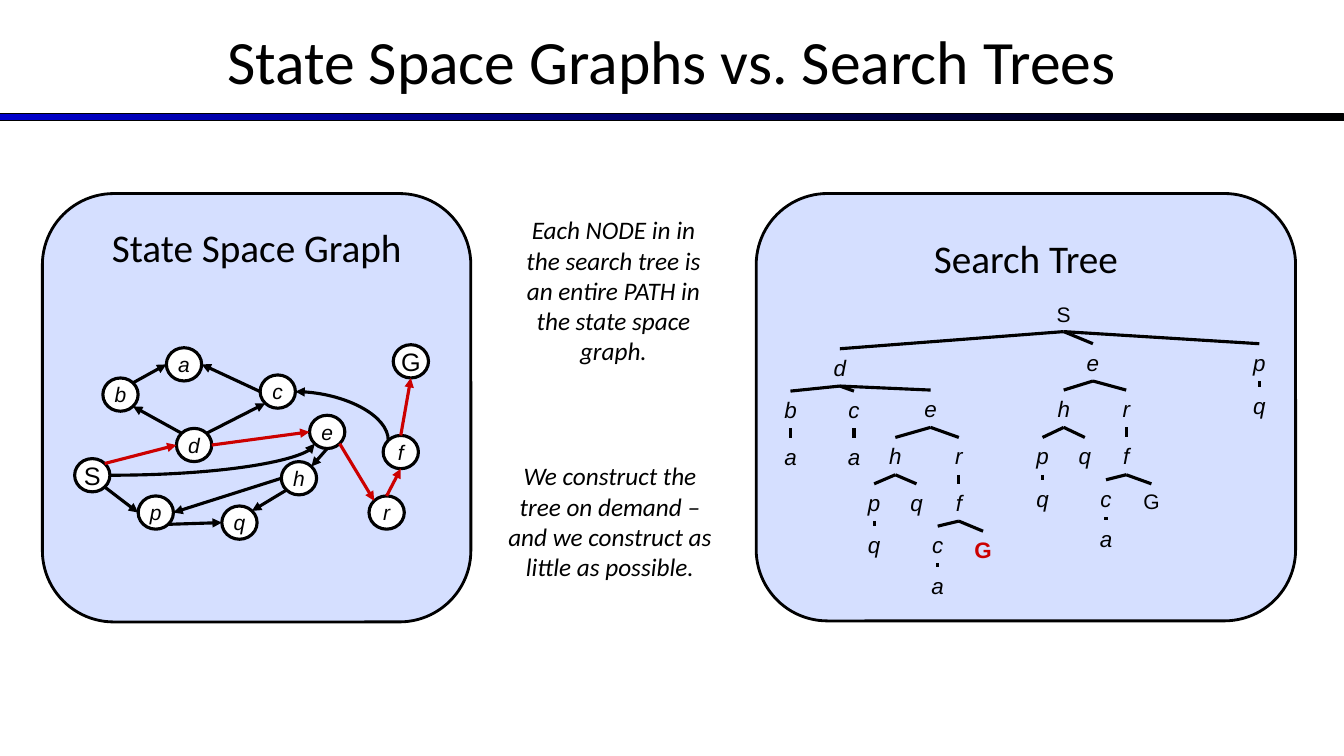
from lxml import etree
from pptx import Presentation
from pptx.dml.color import RGBColor
from pptx.enum.shapes import MSO_CONNECTOR, MSO_SHAPE
from pptx.enum.text import MSO_ANCHOR, MSO_AUTO_SIZE, PP_ALIGN
from pptx.oxml.ns import qn
from pptx.util import Inches, Pt

BLACK = RGBColor(0x00, 0x00, 0x00)
WHITE = RGBColor(0xFF, 0xFF, 0xFF)
RED = RGBColor(0xCC, 0x00, 0x00)
BLUE = RGBColor(0x00, 0x00, 0xCC)
PALE_BLUE = RGBColor(0xD5, 0xDF, 0xFF)

STRAIGHT, CURVE = MSO_CONNECTOR.STRAIGHT, MSO_CONNECTOR.CURVE
RECT, ROUNDED = MSO_SHAPE.RECTANGLE, MSO_SHAPE.ROUNDED_RECTANGLE
CIRCLE = MSO_SHAPE.FLOWCHART_CONNECTOR
CENTER, MIDDLE = PP_ALIGN.CENTER, MSO_ANCHOR.MIDDLE
NO_AUTOFIT = MSO_AUTO_SIZE.NONE
TOP, BOTTOM = 0, 2  # connection sites of a text box

SLIDE_W, SLIDE_H = 13.33, 7.5
NODE_W, NODE_H = 0.35, 0.33
DIAGONAL = 0.354  # offset of a circle's diagonal site, as a share of its size

# Circle sites: horizontal and vertical offset from the centre
SITES = {
    "T": (0, -0.5), "B": (0, 0.5), "L": (-0.5, 0), "R": (0.5, 0),
    "TL": (-DIAGONAL, -DIAGONAL), "TR": (DIAGONAL, -DIAGONAL),
    "BL": (-DIAGONAL, DIAGONAL), "BR": (DIAGONAL, DIAGONAL),
}

# State space graph: left and top of each node
GRAPH_NODES = {
    "S": (0.74, 4.55), "G": (3.9, 3.42), "d": (1.75, 4.25), "b": (1.02, 3.75),
    "p": (1.37, 4.92), "q": (2.2, 5.02), "c": (2.58, 3.72), "e": (3.07, 4.12),
    "h": (2.79, 4.58), "a": (1.65, 3.45), "f": (3.8, 4.32), "r": (3.66, 4.92),
}
# From node and site, to node and site, colour
GRAPH_EDGES = [
    ("S", "BR", "p", "L", BLACK), ("p", "BR", "q", "L", BLACK),
    ("h", "BL", "q", "TR", BLACK), ("h", "L", "p", "R", BLACK),
    ("e", "B", "h", "TR", BLACK), ("e", "BR", "r", "TL", RED),
    ("r", "T", "f", "B", RED), ("f", "T", "G", "B", RED),
    ("S", "TR", "d", "L", RED), ("d", "TL", "b", "BR", BLACK),
    ("b", "TR", "a", "L", BLACK), ("c", "L", "a", "R", BLACK),
    ("d", "TR", "c", "BL", BLACK), ("d", "R", "e", "L", RED),
]

# Search tree: label, centre x, top, children
SEARCH_TREE = ("S", 10.55, 2.94, [
    ("d", 8.33, 3.46, [
        ("b", 7.84, 3.88, [("a", 7.84, 4.35, [])]),
        ("c", 8.47, 3.88, [("a", 8.47, 4.35, [])]),
        ("e", 9.23, 3.87, [
            ("h", 8.88, 4.34, [
                ("p", 8.67, 4.8, [("q", 8.67, 5.22, [])]),
                ("q", 9.09, 4.8, []),
            ]),
            ("r", 9.51, 4.34, [
                ("f", 9.51, 4.8, [
                    ("c", 9.3, 5.22, [("a", 9.3, 5.63, [])]),
                    ("G", 9.75, 5.27, []),
                ]),
            ]),
        ]),
    ]),
    ("e", 10.84, 3.41, [
        ("h", 10.55, 3.87, [
            ("p", 10.34, 4.34, [("q", 10.34, 4.76, [])]),
            ("q", 10.76, 4.34, []),
        ]),
        ("r", 11.17, 3.87, [
            ("f", 11.17, 4.34, [
                ("c", 10.97, 4.76, [("a", 10.97, 5.16, [])]),
                ("G", 11.42, 4.8, []),
            ]),
        ]),
    ]),
    ("p", 12.49, 3.41, [("q", 12.49, 3.84, [])]),
])
GOAL_FOUND = ("G", 9.75)


def write(tf, text, size, font, color=BLACK, italic=False, bold=False):
    p = tf.paragraphs[0]
    p.text = text
    p.alignment = CENTER
    p.font.size, p.font.name = Pt(size), font
    p.font.italic, p.font.bold = italic, bold
    p.font.color.rgb = color


def add_text(shapes, box, text, size, font, **style):
    tb = shapes.add_textbox(*map(Inches, box))
    tb.text_frame.word_wrap = True
    write(tb.text_frame, text, size, font, **style)
    return tb


def add_box(shapes, kind, box, fill, line_width):
    sp = shapes.add_shape(kind, *map(Inches, box))
    sp.shadow.inherit = False
    sp.fill.solid()
    sp.fill.fore_color.rgb = fill
    sp.line.color.rgb = BLACK
    sp.line.width = Pt(line_width)
    return sp


def add_line(shapes, start, end, color=BLACK, kind=STRAIGHT, arrow=None):
    line = shapes.add_connector(kind, *map(Inches, (*start, *end)))
    line.line.color.rgb = color
    line.line.width = Pt(2.25)
    if arrow:
        etree.SubElement(line.line._get_or_add_ln(), qn(f"a:{arrow}"), type="triangle")
    sp_pr = line._element.spPr
    etree.SubElement(sp_pr, qn("a:effectLst"))
    if kind == CURVE:
        # A quarter bend that leaves its start horizontally
        sp_pr.find(qn("a:prstGeom")).set("prst", "curvedConnector2")
    return line


def site(node, name):
    left, top = GRAPH_NODES[node]
    dx, dy = SITES[name]
    return left + NODE_W * (0.5 + dx), top + NODE_H * (0.5 + dy)


def add_graph(shapes):
    for label, (left, top) in GRAPH_NODES.items():
        sp = add_box(shapes, CIRCLE, (left, top, NODE_W, NODE_H), WHITE, 2.25)
        tf = sp.text_frame
        tf.word_wrap = False
        tf.vertical_anchor = MIDDLE
        write(tf, label, 18 if label.isupper() else 15, "Arial", italic=label.islower())
    for source, out, target, into, color in GRAPH_EDGES:
        add_line(shapes, site(source, out), site(target, into), color, arrow="tailEnd")
    add_line(shapes, site("c", "R"), site("f", "TL"), kind=CURVE, arrow="headEnd")
    add_line(shapes, site("S", "R"), site("e", "BL"), kind=CURVE, arrow="tailEnd")


def add_tree(shapes, node):
    label, x, top, children = node
    found = (label, x) == GOAL_FOUND
    small = label.isupper() and not found
    width, height = (0.69 if label.isupper() else 0.35), (0.35 if small else 0.37)
    tb = add_text(shapes, (x - width / 2, top, width, height), label,
                  15 if small else 16, "Arial", color=RED if found else BLACK,
                  italic=label.islower(), bold=found)
    for child in children:
        child_tb = add_tree(shapes, child)
        line = add_line(shapes, (x, top + height), child[1:3])
        line.begin_connect(tb, BOTTOM)
        line.end_connect(child_tb, TOP)
    return tb


def add_header(slide):
    bar = add_box(slide.shapes, RECT, (0, 1.13, SLIDE_W, 0.07), BLUE, 0.75)
    bar.fill.gradient()
    bar.fill.gradient_angle = 0
    for stop, color, position in zip(bar.fill.gradient_stops, (BLUE, BLACK), (0, 1)):
        stop.color.rgb = color
        stop.position = position

    title = slide.shapes.title
    title.left, title.top = Inches(0), Inches(-0.03)
    title.width, title.height = Inches(SLIDE_W), Inches(1.25)
    title.text_frame.auto_size = NO_AUTOFIT
    title.text_frame.vertical_anchor = MIDDLE
    write(title.text_frame, "State Space Graphs vs. Search Trees", 44, "Calibri")


def main():
    prs = Presentation()
    prs.slide_width, prs.slide_height = Inches(SLIDE_W), Inches(SLIDE_H)
    slide = prs.slides.add_slide(prs.slide_layouts[5])
    shapes = slide.shapes
    add_header(slide)

    # Panels
    add_box(shapes, ROUNDED, (7.5, 1.92, 5.35, 4.24), PALE_BLUE, 2)
    add_box(shapes, ROUNDED, (0.42, 1.92, 4.25, 4.25), PALE_BLUE, 2)

    # Diagrams
    add_tree(shapes, SEARCH_TREE)
    add_graph(shapes.add_group_shape().shapes)

    # Notes between the panels
    add_text(shapes, (4.92, 4.52, 2.26, 1.31),
             "We construct the tree on demand – and we construct as little as possible.",
             18, "Calibri", italic=True)
    add_text(shapes, (5, 2.08, 2.17, 1.62),
             "Each NODE in in the search tree is an entire PATH in the state space graph.",
             18, "Calibri", italic=True)

    # Panel headings
    add_text(shapes, (7.51, 2.28, 5.33, 0.57), "Search Tree", 28, "Calibri")
    add_text(shapes, (0.67, 2.17, 3.75, 0.57), "State Space Graph", 28, "Calibri")

    prs.save("out.pptx")


if __name__ == "__main__":
    main()
